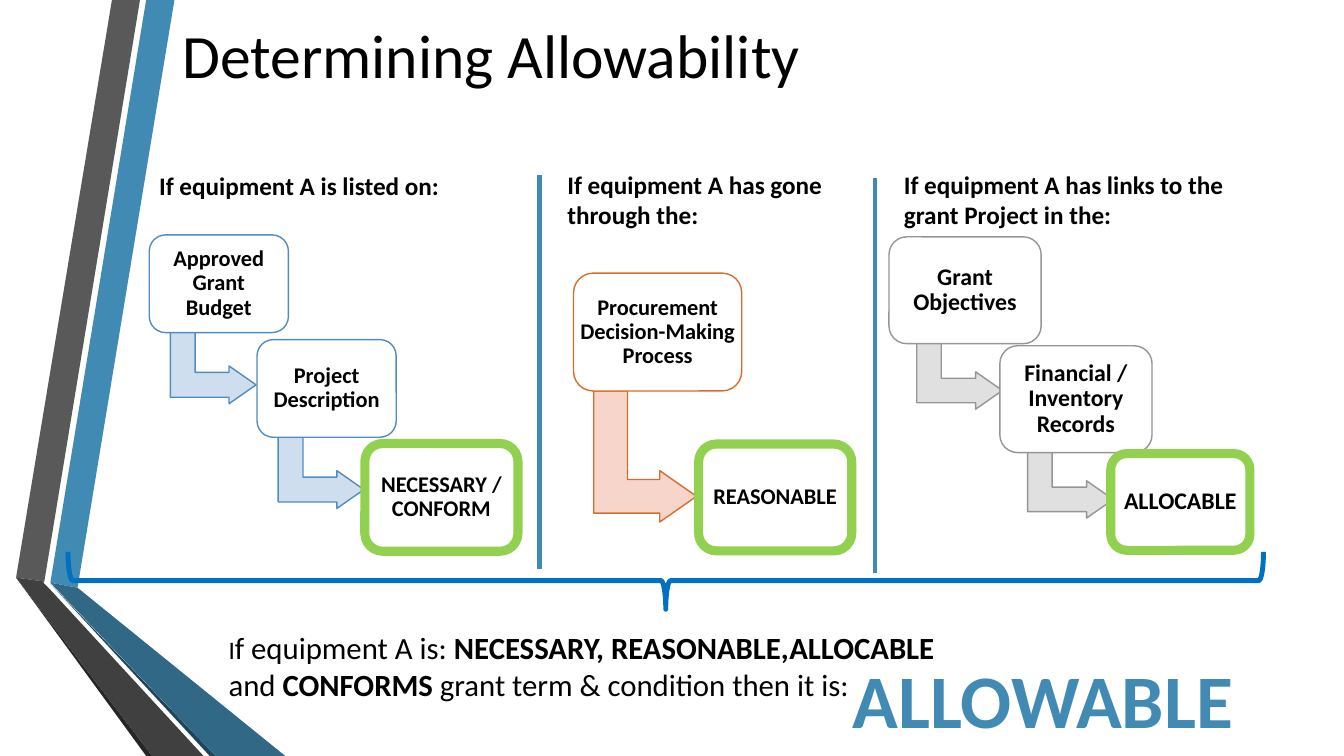
import pptx
import pptx.dml.color
import pptx.enum.shapes
import pptx.enum.text
import pptx.oxml.ns
import pptx.util
from dataclasses import dataclass
from lxml import etree

Pt = pptx.util.Pt
SHAPE = pptx.enum.shapes.MSO_SHAPE
ALIGN = pptx.enum.text.PP_ALIGN
ANCHOR = pptx.enum.text.MSO_ANCHOR


@dataclass(frozen=True)
class Theme:
    font: str = "Calibri"
    text: str = "000000"
    paper: str = "FFFFFF"
    accent: str = "418AB3"
    brace: str = "0070C0"
    verdict: str = "92D050"
    title_size: int = 44
    result_size: int = 54
    summary_size: int = 22
    heading_size: int = 18


class SlideBuilder:
    def __init__(self, slide, theme):
        self.shapes = slide.shapes
        self.theme = theme

    def rgb(self, value):
        return pptx.dml.color.RGBColor.from_string(value)

    def paint(self, shape, fill=None, line=None, weight=1):
        shape.shadow.inherit = False
        if fill:
            shape.fill.solid()
            shape.fill.fore_color.rgb = self.rgb(fill)
        else:
            shape.fill.background()
        if line:
            shape.line.color.rgb = self.rgb(line)
            shape.line.width = Pt(weight)
        else:
            shape.line.fill.background()

    def add_runs(self, paragraph, runs, color=None):
        """Each run is (text, size, bold)."""
        for text, size, bold in runs:
            run = paragraph.add_run()
            run.text = text
            run.font.name = self.theme.font
            run.font.size = Pt(size)
            run.font.bold = bold
            run.font.color.rgb = self.rgb(color or self.theme.text)

    def text(self, box, runs, color=None, anchor=ANCHOR.TOP, spacing=None):
        frame = self.shapes.add_textbox(*map(Pt, box)).text_frame
        frame.word_wrap = True
        frame.vertical_anchor = anchor
        frame.paragraphs[0].line_spacing = spacing
        self.add_runs(frame.paragraphs[0], runs, color)

    def polygon(self, points, fill):
        start, *rest = [(Pt(x), Pt(y)) for x, y in points]
        outline = self.shapes.build_freeform(*start, scale=1.0)
        outline.add_line_segments(rest, close=True)
        self.paint(outline.convert_to_shape(), fill)

    def card(self, box, label, size, line, weight=1, inset=5):
        card = self.shapes.add_shape(SHAPE.ROUNDED_RECTANGLE, *map(Pt, box))
        self.paint(card, self.theme.paper, line, weight)
        frame = card.text_frame
        frame.word_wrap = True
        frame.vertical_anchor = ANCHOR.MIDDLE
        frame.margin_left = frame.margin_right = Pt(inset)
        frame.margin_top = frame.margin_bottom = Pt(inset)
        frame.paragraphs[0].alignment = ALIGN.CENTER
        frame.paragraphs[0].line_spacing = 0.9
        self.add_runs(frame.paragraphs[0], [(label, size, True)])

    def turned(self, kind, box, angle, adjustments, **style):
        """Place a quarter-turned shape so that it covers box as seen."""
        x, y, w, h = box
        shape = self.shapes.add_shape(
            kind, Pt(x + (w - h) / 2), Pt(y + (h - w) / 2), Pt(h), Pt(w))
        shape.rotation = angle
        for index, value in enumerate(adjustments):
            shape.adjustments[index] = value
        self.paint(shape, **style)

    def divider(self, x, top, bottom):
        line = self.shapes.add_connector(
            pptx.enum.shapes.MSO_CONNECTOR.STRAIGHT,
            Pt(x), Pt(top), Pt(x), Pt(bottom))
        line.line.color.rgb = self.rgb(self.theme.accent)
        line.line.width = Pt(3.25)
        etree.SubElement(line._element.spPr, pptx.oxml.ns.qn("a:effectLst"))


# Ribbon at the left edge: fill and corners
RIBBON = [
    ("418AB3", [(36, 416.2), (55.4, 419.8), (124.6, 0), (104.4, 0)]),
    ("595959", [(100, 0), (80, 0), (11.5, 412.6), (31.7, 415.4)]),
    ("262626", [(11.5, 412.6), (104.4, 540), (108.7, 540)]),
    ("20455A", [(36, 416.9), (149.8, 540), (154, 540)]),
    ("316886", [(36, 416.2), (154, 540), (203.8, 540), (55.4, 419.8)]),
    ("404040", [(145.4, 540), (34.6, 419.8), (31, 416.2), (31.7, 415.4),
                (11.5, 412.6), (108.7, 540)]),
]

# Each test: heading, steps that lead down to a verdict, and their style
TESTS = [
    dict(heading="If equipment A is listed on:", heading_box=(106.6, 118, 249, 29),
         steps=[("Approved Grant Budget", 106.6, 167.8),
                ("Project Description", 183.6, 242.6)],
         step_size=(99.4, 69.8), arrow_offset=(15.1, -3.2), arrow_size=(61.2, 54),
         verdict="NECESSARY / CONFORM", verdict_box=(260.6, 316.8, 109.4, 77),
         size=16, inset=5, line="528CBE", fill="CFDEEF"),
    dict(heading="If equipment A has gone through the:",
         heading_box=(398.2, 117.4, 249, 51),
         steps=[("Procurement Decision-Making Process", 409.7, 195.1)],
         step_size=(120.2, 84.2), arrow_offset=(14.4, 0), arrow_size=(73.4, 93.6),
         verdict="REASONABLE", verdict_box=(499, 317.2, 109.4, 76.3),
         size=16, inset=0, line="D66E29", fill="F7D5CB"),
    dict(heading="If equipment A has links to the grant Project in the:",
         heading_box=(638.6, 117.4, 249, 51),
         steps=[("Grant Objectives", 635, 169.2),
                ("Financial / Inventory Records", 714.2, 247)],
         step_size=(108.7, 76.3), arrow_offset=(19.8, -6.5), arrow_size=(61.2, 53.3),
         verdict="ALLOCABLE", verdict_box=(793.4, 324, 99.4, 69.1),
         size=17, inset=5, line="959595", fill="E0E0E0"),
]


def main():
    deck = pptx.Presentation()
    deck.slide_width, deck.slide_height = Pt(960), Pt(540)
    theme = Theme()
    page = SlideBuilder(deck.slides.add_slide(deck.slide_layouts[6]), theme)

    # Ribbon and title
    for fill, corners in RIBBON:
        page.polygon(corners, fill)
    page.text((123.1, 0, 828, 84.2),
              [("Determining Allowability", theme.title_size, False)],
              anchor=ANCHOR.MIDDLE, spacing=0.9)

    # Three tests
    for test in TESTS:
        page.text(test["heading_box"], [(test["heading"], theme.heading_size, True)])
        step_w, step_h = test["step_size"]
        dx, dy = test["arrow_offset"]
        for label, x, y in test["steps"]:
            page.turned(SHAPE.BENT_UP_ARROW,
                        (x + dx, y + step_h + dy, *test["arrow_size"]), 90,
                        (0.328, 0.25, 0.358), fill=test["fill"], line=test["line"])
            page.card((x, y, step_w, step_h), label, test["size"], test["line"],
                      inset=test["inset"])
        page.card(test["verdict_box"], test["verdict"], test["size"],
                  theme.verdict, weight=6.5)

    # Dividers and brace
    page.divider(385.2, 125.3, 406.1)
    page.divider(625, 127.4, 409)
    page.turned(SHAPE.LEFT_BRACE, (48.6, 394.2, 853.9, 41), 270, (0.083, 0.5),
                line=theme.brace, weight=3.5)

    # Conclusion
    page.text((601.9, 463, 344.9, 72), [("ALLOWABLE", theme.result_size, True)],
              color=theme.accent)
    size = theme.summary_size
    page.text((156.2, 434.2, 525.6, 82.8), [
        ("I", theme.heading_size, False),
        ("f equipment A is: ", size, False),
        ("NECESSARY, REASONABLE,ALLOCABLE ", size, True),
        ("and ", size, False),
        ("CONFORMS", size, True),
        (" grant term & condition then it is:", size, False),
    ], anchor=ANCHOR.MIDDLE)

    deck.save("out.pptx")


if __name__ == "__main__":
    main()
